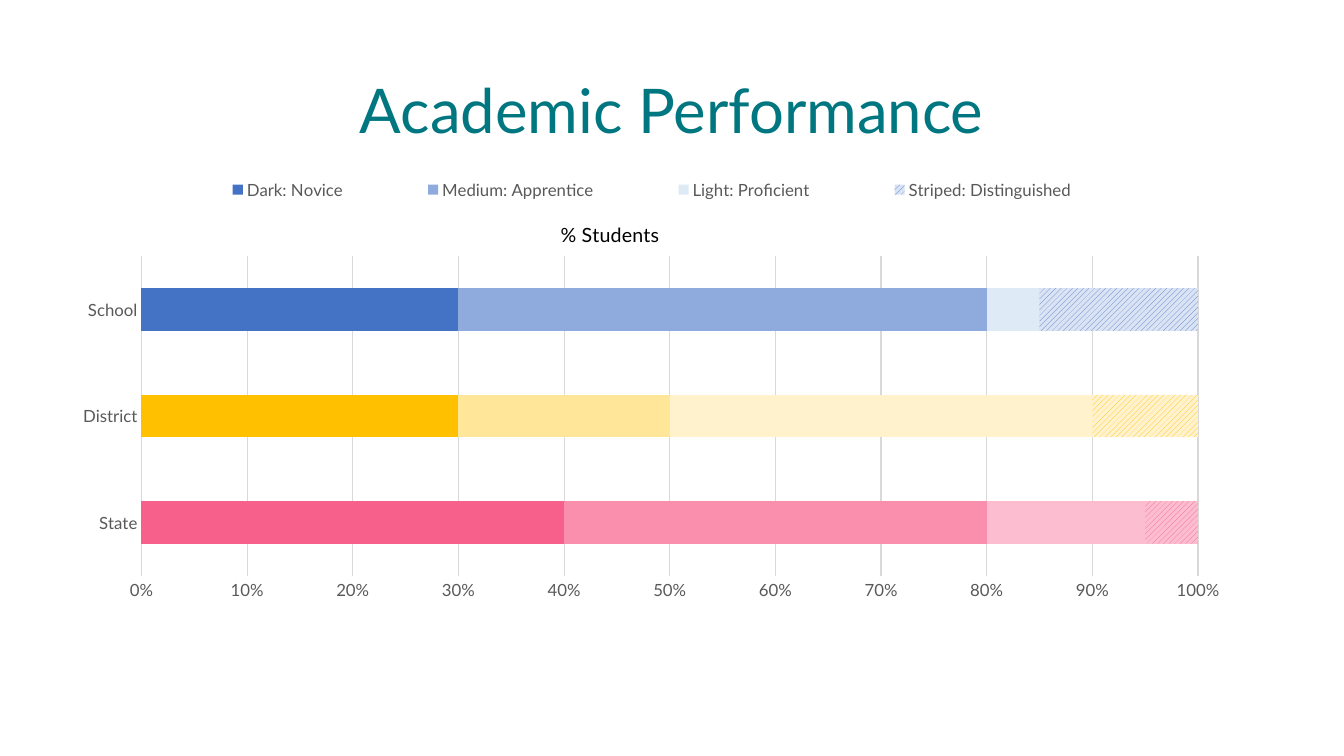
"""Build the Academic Performance slide with its stacked bar chart."""
from lxml.etree import SubElement
from pptx import Presentation
from pptx.chart.data import CategoryChartData
from pptx.dml.color import RGBColor
from pptx.enum.chart import XL_CHART_TYPE, XL_LEGEND_POSITION, XL_TICK_MARK
from pptx.enum.dml import MSO_PATTERN
from pptx.enum.text import MSO_ANCHOR, PP_ALIGN
from pptx.oxml.ns import qn
from pptx.util import Cm, Pt

theme = {
    "font": "Lato",
    "heading": {"size": 44, "color": "007780"},
    "chart_title": {"size": 14, "color": "000000"},
    "label": {"size": 12, "color": "595959"},
    "grid": "D9D9D9",
    "bars": {
        "State": ["F6608B", "F98FAD", "FBBDCF", ("F6608B", "FBBDCF")],
        "District": ["FFC000", "FFE699", "FFF2CC", ("FFC000", "FFF2CC")],
        "School": ["4472C4", "8FAADC", "DEEBF7", ("4472C4", "DAE3F3")],
    },
}
levels = {
    "Dark: Novice": (40, 30, 30),
    "Medium: Apprentice": (40, 20, 50),
    "Light: Proficient": (15, 40, 5),
    "Striped: Distinguished": (5, 10, 15),
}
chart_layouts = {
    "title": (1, {"x": 0.42, "y": 0.12}),
    "legend": (1, {"x": 0.08, "y": 0.03, "w": 0.84, "h": 0.06}),
    "plotArea": (0, {"x": 0.07, "y": 0.21, "w": 0.89, "h": 0.72}),
}


def style_font(font, style):
    values = {"name": theme["font"], "size": Pt(style["size"]), "bold": False}
    for attribute, value in values.items():
        setattr(font, attribute, value)
    font.color.rgb = RGBColor.from_string(style["color"])


def paint(fill, color):
    if isinstance(color, tuple):
        fill.patterned()
        fill.pattern = MSO_PATTERN.WIDE_UPWARD_DIAGONAL
        fill.fore_color.rgb, fill.back_color.rgb = map(RGBColor.from_string, color)
    else:
        fill.solid()
        fill.fore_color.rgb = RGBColor.from_string(color)


presentation = Presentation()
presentation.slide_width, presentation.slide_height = Cm(33.87), Cm(19.05)
slide = presentation.slides.add_slide(presentation.slide_layouts[6])

heading = slide.shapes.add_textbox(Cm(2.33), Cm(1.01), Cm(29.21), Cm(3.68))
frame = heading.text_frame
frame.word_wrap = True
frame.vertical_anchor = MSO_ANCHOR.MIDDLE
paragraph = frame.paragraphs[0]
paragraph.text = "Academic Performance"
paragraph.alignment = PP_ALIGN.CENTER
paragraph.line_spacing = 0.9
style_font(paragraph.runs[0].font, theme["heading"])

chart_data = CategoryChartData()
chart_data.categories = list(theme["bars"])
for level, values in levels.items():
    chart_data.add_series(level, values)
chart = slide.shapes.add_chart(
    XL_CHART_TYPE.BAR_STACKED_100, Cm(1.47), Cm(4.11), Cm(29.92), Cm(11.18), chart_data
).chart
style_font(chart.font, theme["label"])

chart.has_title = True
chart_title = chart.chart_title.text_frame.paragraphs[0]
chart_title.text = "% Students"
style_font(chart_title.runs[0].font, theme["chart_title"])

chart.has_legend = True
legend = chart.legend
legend.position = XL_LEGEND_POSITION.TOP
legend.include_in_layout = False
style_font(legend.font, theme["label"])

for axis in (chart.category_axis, chart.value_axis):
    axis.major_tick_mark = axis.minor_tick_mark = XL_TICK_MARK.NONE
    style_font(axis.tick_labels.font, theme["label"])
chart.value_axis.has_major_gridlines = True
chart.value_axis.tick_labels.number_format = "0%"
chart.value_axis.tick_labels.number_format_is_linked = False
chart.value_axis.format.line.fill.background()
for line in (chart.category_axis.format.line, chart.value_axis.major_gridlines.format.line):
    line.width = Pt(0.75)
    paint(line.fill, theme["grid"])

plot = chart.plots[0]
plot.vary_by_categories = False
plot.gap_width, plot.overlap = 150, 100
for series_index, series in enumerate(plot.series):
    series.invert_if_negative = False
    paint(series.format.fill, theme["bars"]["School"][series_index])
    for point_index, colors in enumerate(theme["bars"].values()):
        paint(series.points[point_index].format.fill, colors[series_index])

for part, (position, values) in chart_layouts.items():
    element = chart.element.find(f".//{qn('c:' + part)}") if hasattr(chart, "element") else chart._chartSpace.find(f".//{qn('c:' + part)}")
    for existing in element.findall(qn("c:layout")):
        element.remove(existing)
    layout = SubElement(element, qn("c:layout"))
    element.insert(position, layout)
    manual = SubElement(layout, qn("c:manualLayout"))
    settings = {"xMode": "edge", "yMode": "edge", **values}
    if part == "plotArea":
        settings = {"layoutTarget": "inner", **settings}
    for name, value in settings.items():
        SubElement(manual, qn(f"c:{name}")).set("val", str(value))

presentation.save("out.pptx")
